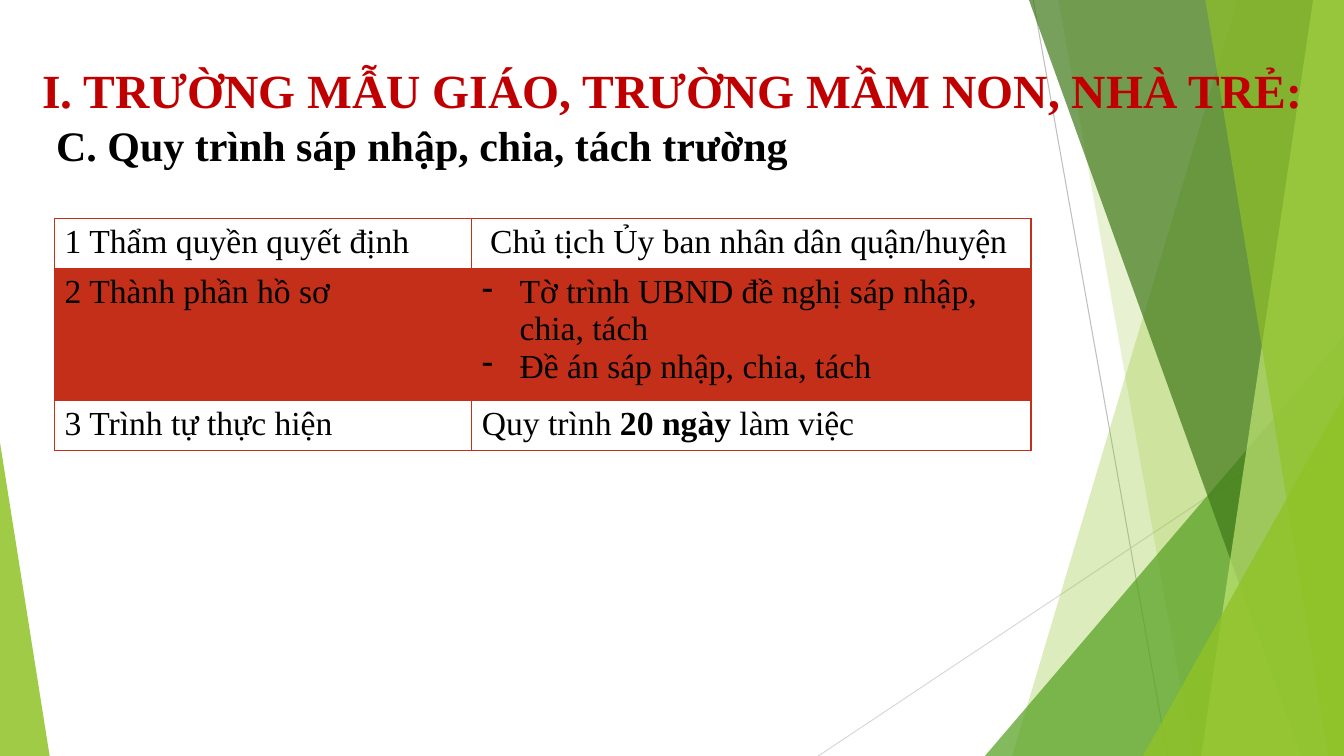
"""Builds the slide on merging and splitting schools, with its green facet backdrop."""
from lxml import etree
from pptx import Presentation
from pptx.dml.color import RGBColor
from pptx.enum import shapes, text
from pptx.oxml import ns
from pptx.util import Pt

WIDTH, HEIGHT = 960, 540
BLACK = RGBColor(0, 0, 0)
CRIMSON = RGBColor(0xC0, 0x00, 0x00)
BRICK = RGBColor(0xC4, 0x2F, 0x1A)
LIME = RGBColor(0x90, 0xC2, 0x26)
PALE_LIME = RGBColor(0xC0, 0xE4, 0x74)
GREEN = RGBColor(0x54, 0xA0, 0x21)
FOREST = RGBColor(0x3F, 0x78, 0x19)
SILVER = RGBColor(0xBF, 0xBF, 0xBF)
LIGHT_SILVER = RGBColor(0xD9, 0xD9, 0xD9)


def add_xml(parent, tag, **attributes):
    return etree.SubElement(parent, ns.qn(tag), attributes)


class FacetSlide:
    font = "Times New Roman"

    def __init__(self, deck):
        self.slide = deck.slides.add_slide(deck.slide_layouts[5])
        self.shapes = self.slide.shapes

    def tint(self, fill, color, opacity):
        fill.solid()
        fill.fore_color.rgb = color
        rgb = fill._xPr.find(".//" + ns.qn("a:srgbClr"))
        add_xml(rgb, "a:alpha", val=str(opacity * 1000))

    def finish(self, facet, color, opacity):
        self.tint(facet.fill, color, opacity)
        facet.line.fill.background()
        facet.shadow.inherit = False

    def ray(self, start, end, color):
        ray = self.shapes.add_connector(
            shapes.MSO_CONNECTOR.STRAIGHT, *map(Pt, start + end))
        ray.line.color.rgb = color
        ray.line.width = Pt(0.75)
        add_xml(ray._element.spPr, "a:effectLst")

    def band(self, top_x, bottom_x, color, opacity):
        outline = self.shapes.build_freeform(Pt(top_x), 0)
        corners = [(WIDTH, 0), (WIDTH, HEIGHT), (bottom_x, HEIGHT)]
        outline.add_line_segments([(Pt(x), Pt(y)) for x, y in corners])
        self.finish(outline.convert_to_shape(), color, opacity)

    def wedge(self, left, width, height, apex, color, opacity):
        wedge = self.shapes.add_shape(
            shapes.MSO_SHAPE.ISOSCELES_TRIANGLE,
            Pt(left), Pt(HEIGHT - height), Pt(width), Pt(height))
        wedge.adjustments[0] = apex
        self.finish(wedge, color, opacity)

    def add_words(self, paragraph, wording, size, color=BLACK, bold=False):
        paragraph.alignment = text.PP_ALIGN.LEFT
        run = paragraph.add_run()
        run.text = wording
        run.font.name = self.font
        run.font.size = Pt(size)
        run.font.bold = bold
        run.font.color.rgb = color

    def title(self, wording, left, top, width, height):
        title = self.shapes.title
        title.left, title.top, title.width, title.height = map(
            Pt, (left, top, width, height))
        frame = title.text_frame
        frame.word_wrap = True
        frame.auto_size = text.MSO_AUTO_SIZE.NONE
        frame.vertical_anchor = text.MSO_ANCHOR.BOTTOM
        self.add_words(frame.paragraphs[0], wording, 34, CRIMSON, True)
        self.shapes._spTree.append(title._element)

    def subtitle(self, wording, left, top, width, height):
        frame = self.shapes.add_textbox(*map(Pt, (left, top, width, height))).text_frame
        frame.word_wrap = True
        frame.auto_size = text.MSO_AUTO_SIZE.SHAPE_TO_FIT_TEXT
        self.add_words(frame.paragraphs[0], wording, 30, bold=True)

    def border(self, cell, edge, width):
        line = add_xml(cell._tc.get_or_add_tcPr(), "a:" + edge, w=str(Pt(width)))
        add_xml(add_xml(line, "a:solidFill"), "a:srgbClr", val=str(BRICK))

    def dash(self, paragraph):
        properties = paragraph._p.get_or_add_pPr()
        properties.set("marL", str(Pt(27)))
        properties.set("indent", str(Pt(-27)))
        add_xml(properties, "a:buFontTx")
        add_xml(properties, "a:buChar", char="-")

    def table(self, rows, left, top, widths, heights):
        table = self.shapes.add_table(
            len(rows), len(widths), Pt(left), Pt(top),
            Pt(sum(widths)), Pt(sum(heights))).table
        for column, width in zip(table.columns, widths):
            column.width = Pt(width)
        for r, (row, height) in enumerate(zip(rows, heights)):
            table.rows[r].height = Pt(height)
            for c, paragraphs in enumerate(row):
                self.fill_cell(table.cell(r, c), paragraphs, r)

    def fill_cell(self, cell, paragraphs, row):
        for edge in ("lnL", "lnR", "lnT", "lnB"):
            under_header = (row, edge) in ((0, "lnB"), (1, "lnT"))
            self.border(cell, edge, 2 if under_header else 1)
        if row % 2:
            self.tint(cell.fill, BRICK, 20)
        else:
            cell.fill.background()
        frame = cell.text_frame
        for i, runs in enumerate(paragraphs):
            paragraph = frame.add_paragraph() if i else frame.paragraphs[0]
            if len(paragraphs) > 1:
                self.dash(paragraph)
            for wording, bold in runs:
                self.add_words(paragraph, wording, 24, bold=bold)


def plain(*lines):
    return [[(line, False)] for line in lines]


def main():
    deck = Presentation()
    deck.slide_width, deck.slide_height = Pt(WIDTH), Pt(HEIGHT)
    page = FacetSlide(deck)

    page.ray((738, 0), (834, HEIGHT), SILVER)
    page.ray((WIDTH, 290), (584.5, HEIGHT), LIGHT_SILVER)
    page.band(884, 723, LIME, 30)
    page.band(756, 852, LIME, 20)
    page.wedge(703.5, 256.5, 300, 1, GREEN, 72)
    page.band(735, 929.5, FOREST, 70)
    page.band(938, 858, PALE_LIME, 70)
    page.band(861, 949, LIME, 65)
    page.wedge(816.5, 143.5, 257, 1, LIME, 80)
    page.wedge(0, 35.5, 224, 0, LIME, 85)

    page.title("I. TRƯỜNG MẪU GIÁO, TRƯỜNG MẦM NON, NHÀ TRẺ:", 23, 42.5, 937, 45.5)
    page.subtitle("C. Quy trình sáp nhập, chia, tách trường", 33, 81.5, 901, 44)
    procedure = [
        (plain("1 Thẩm quyền quyết định"),
         plain(" Chủ tịch Ủy ban nhân dân quận/huyện")),
        (plain("2 Thành phần hồ sơ"),
         plain("Tờ trình UBND đề nghị sáp nhập, chia, tách",
               "Đề án sáp nhập, chia, tách")),
        (plain("3 Trình tự thực hiện"),
         [[("Quy trình ", False), ("20 ngày ", True), ("làm việc", False)]]),
    ]
    page.table(procedure, 39, 156, (298, 399.5), (36, 94, 36))
    deck.save("out.pptx")


if __name__ == "__main__":
    main()
